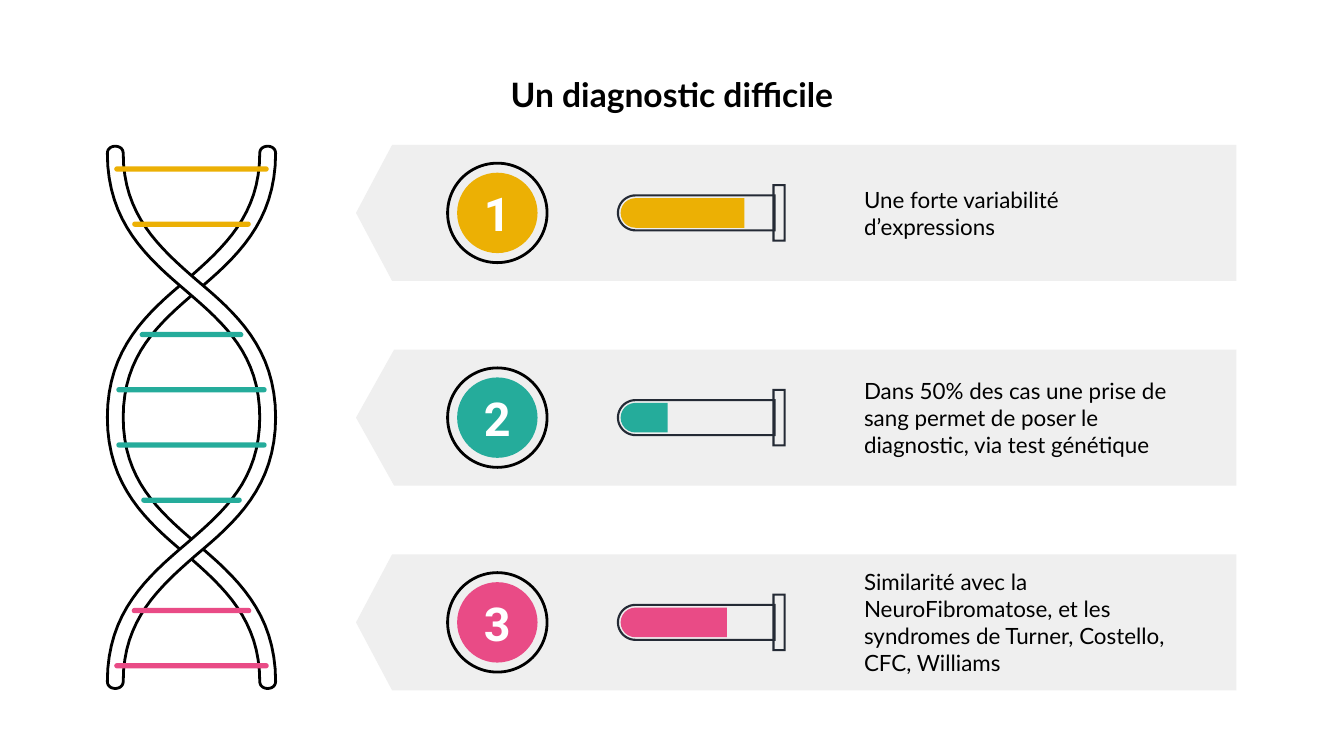
from dataclasses import dataclass
from math import cos, pi, sin

from pptx import Presentation
from pptx.dml.color import RGBColor
from pptx.enum.shapes import MSO_SHAPE as Preset
from pptx.enum.text import MSO_ANCHOR as Anchor, MSO_AUTO_SIZE as AutoSize, PP_ALIGN as Align
from pptx.util import Cm, Pt


@dataclass(frozen=True)
class Theme:
    """Colours, fonts and sizes of the slide."""
    ink: str = "000000"
    paper: str = "FFFFFF"
    panel: str = "EFEFEF"
    glass: str = "242A35"
    yellow: str = "ECB004"
    teal: str = "25AC9B"
    pink: str = "E94B86"
    text_font: str = "Lato"
    number_font: str = "Roboto"
    title_size: float = 18
    text_size: float = 12
    number_size: float = 25
    outline: float = 1.5


@dataclass(frozen=True)
class Box:
    """A region of the slide in centimetres."""
    left: float
    top: float
    width: float
    height: float

    def inner(self, left, middle, width, height):
        """Return a box set from the left edge and the middle line of this one."""
        top = self.top + self.height / 2 + middle - height / 2
        return Box(self.left + left, top, width, height)

    def lengths(self):
        """Return left, top, width and height as slide lengths."""
        return [Cm(side) for side in (self.left, self.top, self.width, self.height)]


THEME = Theme()
ROWS = [
    ("Une forte variabilité d’expressions", THEME.yellow, 2.34, 0.265),
    ("Dans 50% des cas une prise de sang permet de poser le diagnostic, via test génétique",
     THEME.teal, 0.89, 0.28),
    ("Similarité avec la NeuroFibromatose, et les syndromes de Turner, Costello, CFC, Williams",
     THEME.pink, 2.01, 0.265),
]
RUNGS = [
    (0, 2.92, THEME.yellow), (1, 2.24, THEME.yellow),
    (3, 1.96, THEME.teal), (4, 2.84, THEME.teal),
    (5, 2.84, THEME.teal), (6, 1.9, THEME.teal),
    (8, 2.26, THEME.pink), (9, 2.92, THEME.pink),
]
STRAND = [
    (0, 0), (0, 1.31), (0.76, 1.98), (1.5, 2.6),
    (2.21, 3.22), (2.88, 3.83), (2.88, 4.99),
    (2.88, 5.17), (3.18, 5.17), (3.18, 4.99),
    (3.18, 3.68), (2.42, 3.01), (1.68, 2.38),
    (0.97, 1.77), (0.3, 1.18), (0.3, 0),
]


def paint(shape, fill=None, line=None):
    """Set the fill and outline of a shape and drop its shadow."""
    shape.shadow.inherit = False
    if fill:
        shape.fill.solid()
        shape.fill.fore_color.rgb = RGBColor.from_string(fill)
    else:
        shape.fill.background()
    if line:
        shape.line.color.rgb = RGBColor.from_string(line)
        shape.line.width = Pt(THEME.outline)
    else:
        shape.line.fill.background()
    return shape


def add_preset(slide, preset, box, fill=None, line=None):
    """Add a painted preset shape."""
    return paint(slide.shapes.add_shape(preset, *box.lengths()), fill, line)


def add_outline(slide, contours, fill=None, line=None):
    """Add a painted freeform made of closed contours."""
    builder = None
    for contour in contours:
        first, *rest = [(Cm(x), Cm(y)) for x, y in contour]
        if builder is None:
            builder = slide.shapes.build_freeform(*first, scale=1.0)
        else:
            builder.move_to(*first)
        builder.add_line_segments(rest, close=True)
    return paint(builder.convert_to_shape(), fill, line)


def write(shape, text, *, font, size, color, bold=False, align=Align.LEFT,
          anchor=Anchor.MIDDLE, insets=(0.25, 0.25, 0.25, 0.25)):
    """Fill a shape with one formatted paragraph."""
    frame = shape.text_frame
    frame.word_wrap = True
    frame.auto_size = AutoSize.NONE
    frame.vertical_anchor = anchor
    (frame.margin_left, frame.margin_top,
     frame.margin_right, frame.margin_bottom) = [Cm(inset) for inset in insets]
    para = frame.paragraphs[0]
    para.alignment = align
    span = para.add_run()
    span.text = text
    span.font.name, span.font.size, span.font.bold = font, Pt(size), bold
    span.font.color.rgb = RGBColor.from_string(color)


def curve(points, steps=16):
    """Sample a chain of cubic Bézier curves."""
    result = [points[0]]
    for start in range(0, len(points) - 1, 3):
        for step in range(1, steps + 1):
            t = step / steps
            weights = ((1 - t) ** 3, 3 * t * (1 - t) ** 2, 3 * t * t * (1 - t), t ** 3)
            corners = points[start:start + 4]
            result.append(tuple(sum(weight * corner[axis] for weight, corner in zip(weights, corners))
                                for axis in (0, 1)))
    return result


def rectangle(box, inset=0):
    """Return the corners of a box moved inwards."""
    left, top = box.left + inset, box.top + inset
    right, bottom = box.left + box.width - inset, box.top + box.height - inset
    return [(left, top), (right, top), (right, bottom), (left, bottom)]


def round_ended(box, inset=0):
    """Return a contour with a round left end and a square right end."""
    radius = box.height / 2
    center, middle = box.left + radius, box.top + radius
    arc = [(center - (radius - inset) * sin(pi * step / 24),
            middle - (radius - inset) * cos(pi * step / 24)) for step in range(25)]
    corners = rectangle(box, inset)
    return [corners[1], *arc, corners[2]]


def add_title(slide, box, text):
    """Move the title placeholder to its box and write it."""
    title = slide.shapes.title
    title.left, title.top, title.width, title.height = box.lengths()
    write(title, text, font=THEME.text_font, size=THEME.title_size, color=THEME.ink,
          bold=True, align=Align.CENTER, anchor=Anchor.TOP)


def add_helix(slide, box):
    """Draw two mirrored strands and the rungs between them."""
    middle = box.top + box.height / 2
    upper = curve(STRAND)
    strand = [(x, -y) for x, y in upper] + upper[::-1]
    back = [(box.left + x, middle + y) for x, y in strand]
    front = [(box.left + box.width - x, middle + y) for x, y in strand]
    add_outline(slide, [back], line=THEME.ink)
    add_outline(slide, [front], fill=THEME.paper, line=THEME.ink)
    span = 9.39
    for slot, width, color in RUNGS:
        offset = span * (slot / 9 - 0.5)
        place = box.inner((box.width - width) / 2, offset, width, 0.1)
        rung = add_preset(slide, Preset.ROUNDED_RECTANGLE, place, fill=color)
        rung.adjustments[0] = 0.5


def add_tube(slide, box, level, color):
    """Draw a lying test tube with its liquid and stopper."""
    glass = box.inner(0, 0, 3, 0.7)
    stopper = box.inner(2.94, 0, 0.25, box.height)
    thickness = 0.04
    for part, contour in ((glass, round_ended), (stopper, rectangle)):
        add_outline(slide, [contour(part), contour(part, thickness)], fill=THEME.glass)
    depth = 0.56
    place = box.inner(0.07 + (level - depth) / 2, 0, depth, level)
    liquid = add_preset(slide, Preset.ROUND_2_SAME_RECTANGLE, place, fill=color)
    liquid.adjustments[0], liquid.adjustments[1] = 0.5, 0
    liquid.rotation = 270


def add_row(slide, box, number, text, color, level, notch):
    """Draw one arrow panel with its number, tube and text."""
    panel = add_preset(slide, Preset.PENTAGON, box, fill=THEME.panel)
    panel.adjustments[0] = notch
    panel.element.spPr.xfrm.set("flipH", "1")
    disc = add_preset(slide, Preset.OVAL, box.inner(1.91, 0, 1.52, 1.52), fill=color)
    write(disc, str(number), font=THEME.number_font, size=THEME.number_size,
          color=THEME.paper, bold=True, align=Align.CENTER, insets=(0, 0, 0, 0))
    add_preset(slide, Preset.OVAL, box.inner(1.73, 0, 1.88, 1.88), line=THEME.ink)
    add_tube(slide, box.inner(4.93, 0, 3.19, 1.09), level, color)
    label = slide.shapes.add_textbox(*box.inner(9.09, 0, 6.71, 1.52).lengths())
    write(label, text, font=THEME.text_font, size=THEME.text_size, color=THEME.ink,
          insets=(0.51, 0.25, 0.38, 0.25))


def main():
    """Build the slide and save the deck."""
    deck = Presentation()
    deck.slide_width, deck.slide_height = Cm(25.4), Cm(14.29)
    slide = deck.slides.add_slide(deck.slide_layouts[5])
    add_title(slide, Box(1.27, 1.14, 22.86, 0.94), "Un diagnostic difficile")
    add_helix(slide, Box(2.03, 2.71, 3.18, 10.36))
    for index, row in enumerate(ROWS):
        add_row(slide, Box(6.73, 2.74 + 3.87 * index, 16.64, 2.57), index + 1, *row)
    deck.save("out.pptx")


if __name__ == "__main__":
    main()
